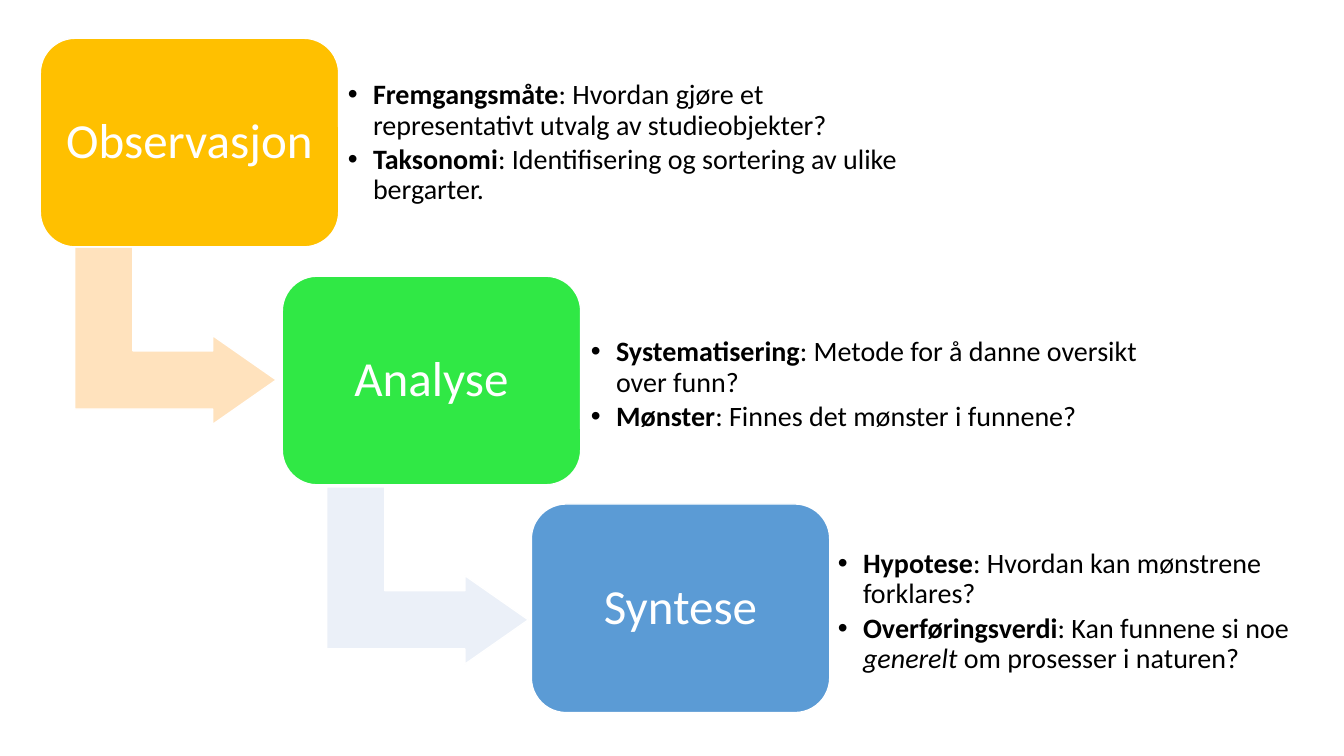
from collections import namedtuple

from lxml import etree
from pptx import Presentation
from pptx.dml.color import RGBColor
from pptx.enum.shapes import MSO_SHAPE
from pptx.enum.text import MSO_ANCHOR, PP_ALIGN
from pptx.oxml.ns import qn
from pptx.util import Inches, Pt

ROUNDED = MSO_SHAPE.ROUNDED_RECTANGLE
BENT_ARROW = MSO_SHAPE.BENT_UP_ARROW
MIDDLE = MSO_ANCHOR.MIDDLE
CENTER = PP_ALIGN.CENTER

WHITE = RGBColor(0xFF, 0xFF, 0xFF)
BLACK = RGBColor(0x00, 0x00, 0x00)
AMBER = RGBColor(0xFF, 0xC0, 0x00)
GREEN = RGBColor(0x30, 0xE8, 0x45)
BLUE = RGBColor(0x5B, 0x9B, 0xD5)
PEACH = RGBColor(0xFF, 0xE2, 0xBD)
PALE_BLUE = RGBColor(0xEB, 0xF0, 0xF8)

FONT = "Calibri"
BLOCK_SIZE = (2.96, 2.07)
NOTE_HEIGHT = 1.68
ARROW_SIZE = (1.76, 2)

Box = namedtuple("Box", "left top width height")
Step = namedtuple("Step", "label color block note notes")
Span = namedtuple("Span", "text bold italic", defaults=(False, False))

STEPS = [
    Step("Observasjon", AMBER, Box(0.4, 0.38, *BLOCK_SIZE), Box(3.37, 0.58, 5.84, NOTE_HEIGHT), [
        [Span("Fremgangsmåte", bold=True),
         Span(": Hvordan gjøre et representativt utvalg av studieobjekter?")],
        [Span("Taksonomi", bold=True),
         Span(": Identifisering og sortering av ulike bergarter.")],
    ]),
    Step("Analyse", GREEN, Box(2.8, 2.74, *BLOCK_SIZE), Box(5.78, 2.98, 5.62, NOTE_HEIGHT), [
        [Span("Systematisering", bold=True),
         Span(": Metode for å danne oversikt over funn?")],
        [Span("Mønster", bold=True), Span(": Finnes det mønster i funnene?")],
    ]),
    Step("Syntese", BLUE, Box(5.27, 5, *BLOCK_SIZE), Box(8.23, 5.23, 5.22, NOTE_HEIGHT), [
        [Span("Hypotese", bold=True), Span(": Hvordan kan mønstrene forklares?")],
        [Span("Overføringsverdi", bold=True), Span(": Kan funnene si noe "),
         Span("generelt", italic=True), Span(" om prosesser i naturen?")],
    ]),
]
ARROWS = [
    (Box(0.86, 2.33, *ARROW_SIZE), PEACH),
    (Box(3.36, 4.71, *ARROW_SIZE), PALE_BLUE),
]


def in_inches(box):
    return [Inches(length) for length in box]


def add_filled_shape(slide, kind, box, color, adjustments):
    shape = slide.shapes.add_shape(kind, *in_inches(box))
    shape.shadow.inherit = False
    shape.fill.solid()
    shape.fill.fore_color.rgb = color
    shape.line.color.rgb = WHITE
    shape.line.width = Pt(1)
    for index, value in enumerate(adjustments):
        shape.adjustments[index] = value
    return shape


def set_up_frame(frame, inset, wrap):
    frame.word_wrap = wrap
    frame.vertical_anchor = MIDDLE
    frame.margin_left = frame.margin_right = Inches(inset)
    frame.margin_top = frame.margin_bottom = Inches(inset)


def set_font(paragraph, size, color):
    paragraph.font.name = FONT
    paragraph.font.size = Pt(size)
    paragraph.font.color.rgb = color


def add_bullet(paragraph):
    """Give the paragraph a hanging bullet; call before setting its font."""
    properties = paragraph._p.get_or_add_pPr()
    properties.set("marL", str(Inches(0.25)))
    properties.set("indent", str(Inches(-0.25)))
    etree.SubElement(properties, qn("a:buFont"), typeface="Arial")
    etree.SubElement(properties, qn("a:buChar"), char="•")


def add_arrow(slide, box, color):
    arrow = add_filled_shape(slide, BENT_ARROW, box, color, (0.328, 0.25, 0.358))
    arrow.rotation = 90


def add_block(slide, box, label, color):
    block = add_filled_shape(slide, ROUNDED, box, color, (0.167,))
    set_up_frame(block.text_frame, 0.15, wrap=False)
    paragraph = block.text_frame.paragraphs[0]
    paragraph.text = label
    paragraph.alignment = CENTER
    paragraph.line_spacing = 0.9
    set_font(paragraph, 35, WHITE)


def add_notes(slide, box, notes):
    frame = slide.shapes.add_textbox(*in_inches(box)).text_frame
    set_up_frame(frame, 0.08, wrap=True)
    for index, spans in enumerate(notes):
        paragraph = frame.add_paragraph() if index else frame.paragraphs[0]
        paragraph.level = 1
        paragraph.line_spacing = 0.9
        paragraph.space_after = Pt(3)
        add_bullet(paragraph)
        set_font(paragraph, 20, BLACK)
        for span in spans:
            run = paragraph.add_run()
            run.text = span.text
            run.font.bold = span.bold
            run.font.italic = span.italic


def main():
    deck = Presentation()
    deck.slide_width, deck.slide_height = Inches(13.33), Inches(7.5)
    slide = deck.slides.add_slide(deck.slide_layouts[6])
    for box, color in ARROWS:
        add_arrow(slide, box, color)
    for step in STEPS:
        add_block(slide, step.block, step.label, step.color)
        add_notes(slide, step.note, step.notes)
    deck.save("out.pptx")


if __name__ == "__main__":
    main()
